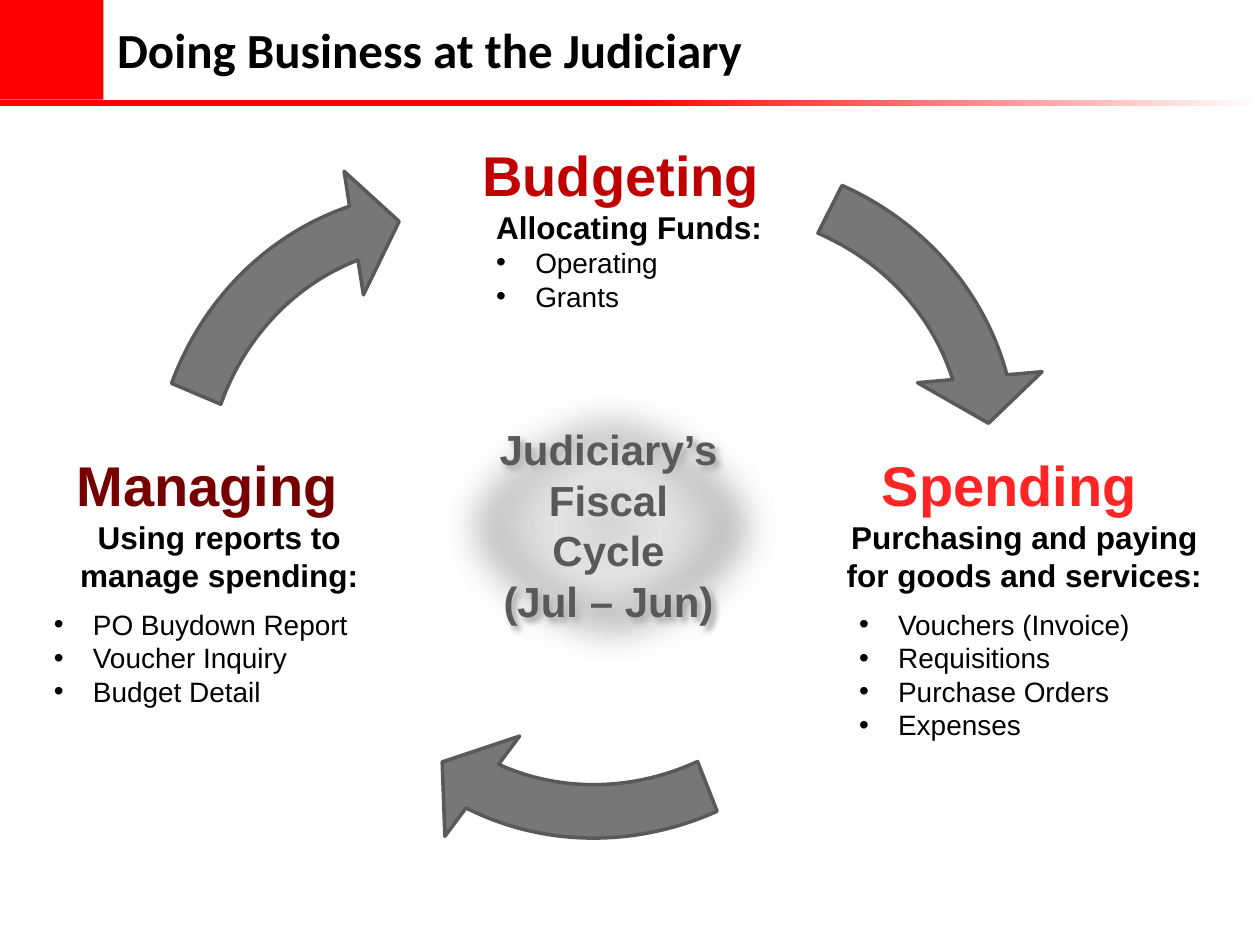
import pptx
import pptx.util
import pptx.dml.color
import pptx.enum.shapes
import pptx.enum.text
import pptx.oxml
import pptx.oxml.ns
from pptx.util import Inches

COLORS = {
    "red": "FF0000", "white": "FFFFFF", "black": "000000",
    "budget": "C00000", "spend": "FF2525", "manage": "760000",
    "arrow": "777777", "edge": "595959",
}
HUB = [(0, "D5D5D5"), (23, "E3E3E3"), (69, "BFBFBF"), (97, "B2B2B2")]
KIND = pptx.enum.shapes.MSO_SHAPE
ALIGN = pptx.enum.text.PP_ALIGN
FIT = pptx.enum.text.MSO_AUTO_SIZE

# heading, colour, its box; caption, its box, centred; bullets, their box
STAGES = [
    ("Budgeting", "budget", (3.73, 1.07, 2.42, 0.64),
     "Allocating Funds:", (3.84, 1.6, 2.33, 0.4), False,
     ["Operating", "Grants"], (3.84, 1.9, 1.5, 0.64)),
    ("Spending", "spend", (6.9, 3.53, 2.24, 0.64),
     "Purchasing and paying for goods and services:",
     (6.59, 4.06, 3.08, 0.71), True,
     ["Vouchers (Invoice)", "Requisitions", "Purchase Orders", "Expenses"],
     (6.72, 4.77, 2.38, 1.18)),
    ("Managing", "manage", (0.51, 3.53, 2.29, 0.64),
     "Using reports to manage spending:", (0.2, 4.06, 3.08, 0.71), True,
     ["PO Buydown Report", "Voucher Inquiry", "Budget Detail"],
     (0.33, 4.77, 2.56, 0.91)),
]
# left, top, rotation
ARROWS = [(2.12, 1.68, 307.6), (0.79, 1.37, 82), (2.91, 0.97, 175.8)]


def rgb(name):
    return pptx.dml.color.RGBColor.from_string(COLORS[name])


def xml(text):
    """Parse one element of the drawing namespace."""
    head, rest = text.split(" ", 1)
    space = pptx.oxml.ns.nsdecls("a")
    return pptx.oxml.parse_xml(f"{head} {space} {rest}")


def style(para, size, color, bold=True, face="Arial"):
    font = para.font
    font.name, font.size, font.bold = face, pptx.util.Pt(size), bold
    font.color.rgb = rgb(color)


def add_shape(slide, kind, box):
    shape = slide.shapes.add_shape(kind, *map(Inches, box))
    shape.shadow.inherit = False
    shape.line.fill.background()
    return shape


def shade(shape, stops, way):
    """Fill with a gradient of (percent, hex) stops; way is its direction."""
    shape.fill.gradient()
    grad = shape._element.spPr.find(pptx.oxml.ns.qn("a:gradFill"))
    for child in list(grad):
        grad.remove(child)
    marks = "".join(
        f'<a:gs pos="{pos * 1000}"><a:srgbClr val="{tone}"/></a:gs>'
        for pos, tone in stops)
    grad.append(xml(f"<a:gsLst >{marks}</a:gsLst>"))
    grad.append(xml(way))


def add_text(group, box, lines, size, color, bold=True, wrap=False,
             bullet=False):
    frame = group.shapes.add_textbox(*map(Inches, box)).text_frame
    frame.word_wrap = wrap
    frame.auto_size = FIT.SHAPE_TO_FIT_TEXT
    frame.text = "\n".join(lines)
    for para in frame.paragraphs:
        if wrap:
            para.alignment = ALIGN.CENTER
        if bullet:
            props = para._p.get_or_add_pPr()
            props.set("marL", str(Inches(0.31)))
            props.set("indent", str(-Inches(0.31)))
            props.append(xml('<a:buFont typeface="Arial"/>'))
            props.append(xml('<a:buChar char="•"/>'))
        style(para, size, color, bold)


def add_header(slide):
    bar = add_shape(slide, KIND.RECTANGLE, (0, 0.79, 10, 0.05))
    red = COLORS["red"]
    shade(bar, [(0, red), (50, red), (100, COLORS["white"])],
          '<a:lin ang="0" scaled="0"/>')
    block = add_shape(slide, KIND.RECTANGLE, (0, 0, 0.82, 0.79))
    block.fill.solid()
    block.fill.fore_color.rgb = rgb("red")

    title = slide.shapes.title
    title.left, title.top = Inches(0.83), Inches(0.03)
    title.width, title.height = Inches(7.25), Inches(0.72)
    frame = title.text_frame
    frame.text = "Doing Business at the Judiciary"
    frame.auto_size = FIT.NONE
    frame.vertical_anchor = pptx.enum.text.MSO_ANCHOR.MIDDLE
    para = frame.paragraphs[0]
    para.alignment = ALIGN.LEFT
    style(para, 28, "black", face="Calibri")


def add_stage(slide, head, color, spot, note, place, wrap, items, box):
    group = slide.shapes.add_group_shape()
    add_text(group, spot, [head], 32, color)
    add_text(group, place, [note], 18, "black", wrap=wrap)
    add_text(group, box, items, 16, "black", bold=False, bullet=True)


def add_hub(slide):
    hub = add_shape(slide, KIND.OVAL, (3.41, 3.03, 2.84, 2.27))
    shade(hub, HUB, '<a:path path="circle">'
          '<a:fillToRect l="50000" t="50000" r="50000" b="50000"/></a:path>')
    effects = hub._element.spPr.find(pptx.oxml.ns.qn("a:effectLst"))
    effects.append(xml(
        '<a:outerShdw blurRad="50800" dist="38100" dir="2700000" algn="tl" '
        f'rotWithShape="0"><a:srgbClr val="{COLORS["black"]}">'
        '<a:alpha val="40000"/></a:srgbClr></a:outerShdw>'))
    effects.append(xml('<a:softEdge rad="317500"/>'))
    frame = hub.text_frame
    frame.word_wrap = True
    frame.text = "Judiciary’s Fiscal Cycle\v(Jul – Jun)"
    para = frame.paragraphs[0]
    para.alignment = ALIGN.CENTER
    style(para, 24, "edge")


def add_arrow(slide, left, top, turn):
    arrow = add_shape(slide, KIND.CIRCULAR_ARROW, (left, top, 5.44, 5.17))
    for i, value in enumerate((0.082, 5.761, 101.721, 72.601, 0.096)):
        arrow.adjustments[i] = value
    arrow.rotation = turn
    arrow.fill.solid()
    arrow.fill.fore_color.rgb = rgb("arrow")
    arrow.line.color.rgb = rgb("edge")
    arrow.line.width = pptx.util.Pt(2)


def main():
    deck = pptx.Presentation()
    deck.slide_width, deck.slide_height = Inches(10), Inches(7.5)
    slide = deck.slides.add_slide(deck.slide_layouts[5])
    add_header(slide)
    for stage in STAGES:
        add_stage(slide, *stage)
    add_hub(slide)
    for arrow in ARROWS:
        add_arrow(slide, *arrow)
    deck.save("out.pptx")


if __name__ == "__main__":
    main()
